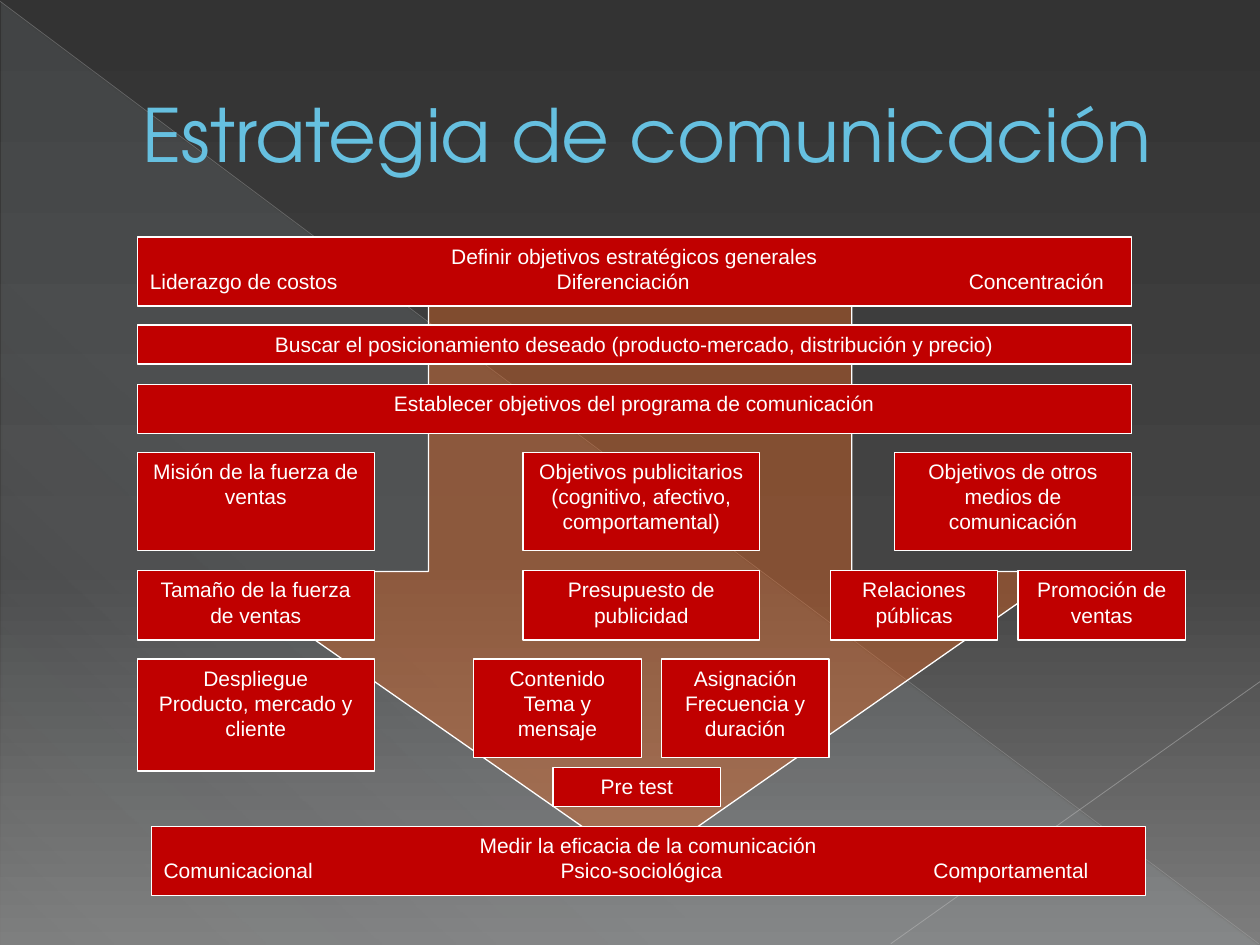
from lxml.etree import SubElement
from pptx import Presentation
from pptx.dml.color import RGBColor
from pptx.enum.shapes import MSO_CONNECTOR as Connector, MSO_SHAPE as Shape
from pptx.enum.text import MSO_ANCHOR as Anchor, PP_ALIGN as Align
from pptx.oxml.ns import qn
from pptx.util import Inches, Pt

RED, WHITE, ORANGE, SKY, ICE = "C00000", "FFFFFF", "EB641B", "66C0E0", "DEF5FA"
LEFT, WIDE, COLUMN, NARROW = 1.09, 7.89, 1.88, 1.33
MIDDLE = 4.15


def color(value):
    """Turn a hex string into a colour."""
    return RGBColor.from_string(value)


def set_alpha(element, percent):
    """Make every plain colour inside the element partly transparent."""
    for node in element.iter(qn("a:srgbClr")):
        SubElement(node, qn("a:alpha"), val=str(percent * 1000))


def set_gradient(fill, element, stops, angle):
    """Give a fill a linear gradient of (position, colour, opacity) stops."""
    fill.gradient()
    gradient = element.find(".//" + qn("a:gradFill"))
    for child in list(gradient):
        gradient.remove(child)
    stop_list = SubElement(gradient, qn("a:gsLst"))
    for position, value, opacity in stops:
        stop = SubElement(stop_list, qn("a:gs"), pos=str(position * 1000))
        SubElement(stop, qn("a:srgbClr"), val=value)
        set_alpha(stop, opacity)
    SubElement(gradient, qn("a:lin"), ang=str(angle * 60000), scaled="0")


def add_shape(slide, kind, box, fill=None):
    """Add a preset shape without shadow, with a thin white line if filled."""
    shape = slide.shapes.add_shape(kind, *map(Inches, box))
    shape.shadow.inherit = False
    if fill is None:
        shape.line.fill.background()
        return shape
    shape.fill.solid()
    shape.fill.fore_color.rgb = color(fill)
    shape.line.color.rgb = color(WHITE)
    shape.line.width = Pt(0.75)
    return shape


def add_line(slide, start, end, value, width, opacity):
    """Add a faint straight line."""
    line = slide.shapes.add_connector(
        Connector.STRAIGHT, *map(Inches, (*start, *end)))
    line.line.color.rgb = color(value)
    line.line.width = Pt(width)
    properties = line._element.spPr
    set_alpha(properties, opacity)
    SubElement(properties, qn("a:effectLst"))


def set_text(paragraph, text, font_name, size, value):
    """Fill a paragraph with one formatted run."""
    run = paragraph.add_run()
    run.text = text
    for name, setting in {"name": font_name, "size": Pt(size)}.items():
        setattr(run.font, name, setting)
    run.font.color.rgb = color(value)


def set_frame(frame, anchor):
    """Make a text frame wrap, with the given vertical anchor."""
    for name, setting in {"word_wrap": True, "vertical_anchor": anchor}.items():
        setattr(frame, name, setting)


def add_box(slide, box, lines, stops=()):
    """Add a red box of centred lines; stops place the columns of its last line."""
    frame = add_shape(slide, Shape.RECTANGLE, box, RED).text_frame
    set_frame(frame, Anchor.TOP)
    for index, text in enumerate(lines):
        paragraph = frame.add_paragraph() if index else frame.paragraphs[0]
        paragraph.alignment = Align.CENTER
        set_text(paragraph, text, "Arial", 12, WHITE)
    if stops:
        paragraph.alignment = Align.LEFT
        tabs = SubElement(paragraph._p.get_or_add_pPr(), qn("a:tabLst"))
        for stop in stops:
            SubElement(tabs, qn("a:tab"), pos=str(Inches(stop)), algn="l")


def add_background(slide):
    """Paint the grey gradient, the light triangle and the two faint lines."""
    set_gradient(slide.background.fill, slide.element,
                 [(0, "333333", 100), (60, "444444", 100), (100, "7D7D7D", 100)], 90)
    triangle = add_shape(slide, Shape.RIGHT_TRIANGLE, (0.01, 0.02, 9.98, 7.48))
    set_gradient(triangle.fill, triangle._element,
                 [(0, ICE, 10), (70, ICE, 8), (100, ICE, 1)], 133)
    add_line(slide, (0, 0.01), (9.99, 7.49), "B9B9B9", 0.39, 35)
    add_line(slide, (10, 5.41), (7.07, 7.49), "C1C1C1", 0.47, 45)


def add_title(slide, box, text):
    """Add the indented slide title."""
    frame = slide.shapes.add_textbox(*map(Inches, box)).text_frame
    set_frame(frame, Anchor.MIDDLE)
    paragraph = frame.paragraphs[0]
    paragraph._p.get_or_add_pPr().set("marL", str(Inches(0.53)))
    set_text(paragraph, text, "TeX Gyre Adventor", 42, SKY)


def add_arrow(slide, box):
    """Add the translucent arrow behind the boxes."""
    arrow = add_shape(slide, Shape.DOWN_ARROW, box, ORANGE)
    set_alpha(arrow._element.spPr.find(qn("a:solidFill")), 39)


def add_row(slide, top, height, width, cells):
    """Add boxes of equal size at the given left edges."""
    for left, *lines in cells:
        add_box(slide, (left, top, width, height), lines)


def add_strategy(slide):
    """Add the levels of the communication strategy from top to bottom."""
    add_box(slide, (LEFT, 1.88, WIDE, 0.55),
            ["Definir objetivos estratégicos generales",
             "Liderazgo de costos\tDiferenciación\tConcentración"], (3.23, 6.5))
    add_row(slide, 2.58, 0.31, WIDE, [
        (LEFT, "Buscar el posicionamiento deseado (producto-mercado, distribución y precio)")])
    add_row(slide, 3.05, 0.39, WIDE, [
        (LEFT, "Establecer objetivos del programa de comunicación")])
    add_row(slide, 3.59, 0.78, COLUMN, [
        (LEFT, "Misión de la fuerza de ventas"),
        (MIDDLE, "Objetivos publicitarios (cognitivo, afectivo, comportamental)"),
        (LEFT + WIDE - COLUMN, "Objetivos de otros medios de comunicación")])
    add_row(slide, 4.53, 0.55, COLUMN, [
        (LEFT, "Tamaño de la fuerza de ventas"),
        (MIDDLE, "Presupuesto de publicidad")])
    add_row(slide, 4.53, 0.55, NARROW, [
        (6.59, "Relaciones públicas"), (8.08, "Promoción de ventas")])
    add_row(slide, 5.23, 0.89, COLUMN, [
        (LEFT, "Despliegue", "Producto, mercado y cliente")])
    add_row(slide, 5.23, 0.78, NARROW, [
        (3.76, "Contenido", "Tema y mensaje"),
        (5.25, "Asignación", "Frecuencia y duración")])
    add_row(slide, 6.09, 0.31, NARROW, [(4.39, "Pre test")])
    add_box(slide, (1.2, 6.56, WIDE, 0.55),
            ["Medir la eficacia de la comunicación",
             "Comunicacional\tPsico-sociológica\tComportamental"], (3.15, 6.11))


def main():
    """Build and save the presentation."""
    presentation = Presentation()
    presentation.slide_width, presentation.slide_height = Inches(10), Inches(7.5)
    slide = presentation.slides.add_slide(presentation.slide_layouts[6])
    add_background(slide)
    add_arrow(slide, (1.72, 2.19, 6.72, 4.69))
    add_title(slide, (0.5, 0.29, 9, 1.53), "Estrategia de comunicación")
    add_strategy(slide)
    presentation.save("out.pptx")


if __name__ == "__main__":
    main()
